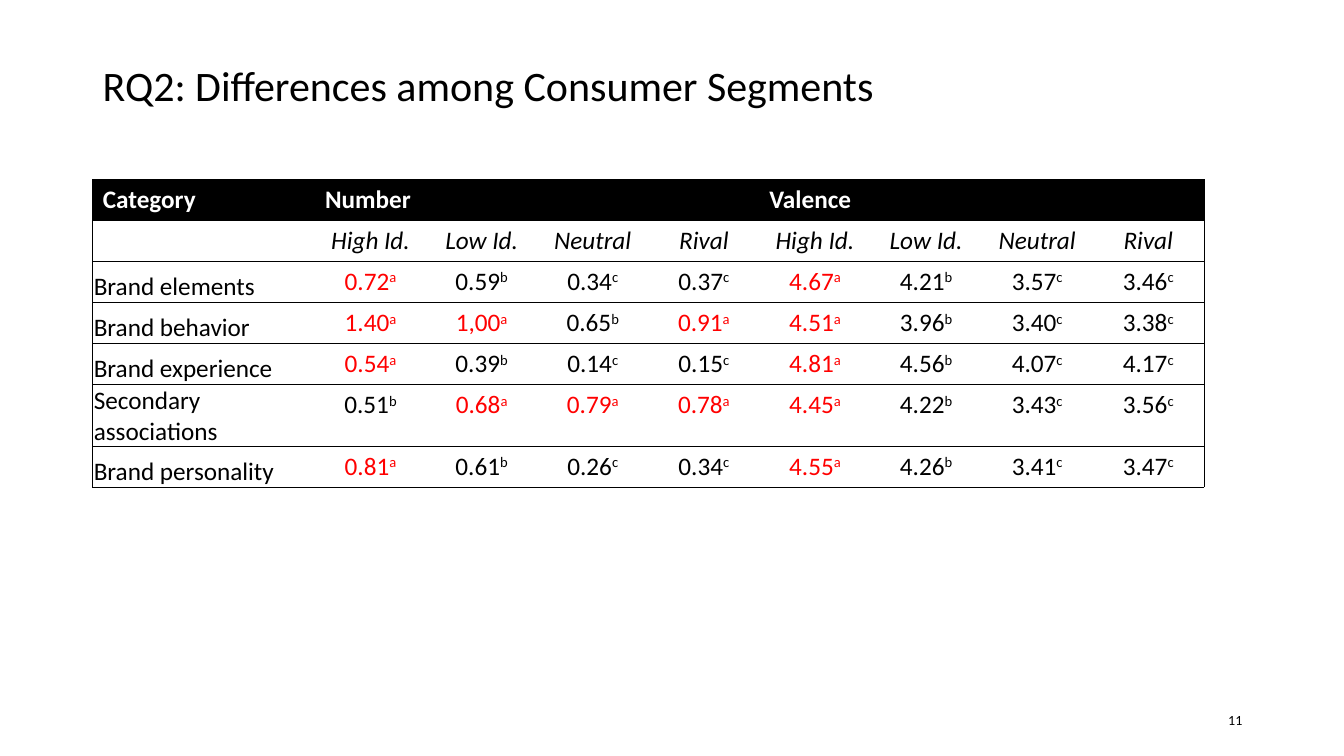
import lxml.etree
import pptx
import pptx.dml.color
import pptx.enum.text
import pptx.oxml.ns
import pptx.util

Inches = pptx.util.Inches
ALIGN = pptx.enum.text.PP_ALIGN
ANCHOR = pptx.enum.text.MSO_ANCHOR
BLACK, WHITE, RED = "000000", "FFFFFF", "FF0000"
NO_STYLE = "{2D5ABB26-0587-4C30-8999-92F81FD0307C}"
SEGMENTS = ["High Id.", "Low Id.", "Neutral", "Rival"]
RATINGS = [
    ("Brand elements", "0.72a 0.59b 0.34c 0.37c 4.67a 4.21b 3.57c 3.46c"),
    ("Brand behavior", "1.40a 1,00a 0.65b 0.91a 4.51a 3.96b 3.40c 3.38c"),
    ("Brand experience", "0.54a 0.39b 0.14c 0.15c 4.81a 4.56b 4.07c 4.17c"),
    ("Secondary associations", "0.51b 0.68a 0.79a 0.78a 4.45a 4.22b 3.43c 3.56c"),
    ("Brand personality", "0.81a 0.61b 0.26c 0.34c 4.55a 4.26b 3.41c 3.47c"),
]


def rgb(color):
    """Turn a hex string into a colour."""
    return pptx.dml.color.RGBColor.from_string(color)


def add_run(p, text, size=18, color=BLACK, bold=False, italic=False):
    """Add one formatted run to a paragraph."""
    r = p.add_run()
    r.text = text
    r.font.name = "Calibri"
    r.font.size = pptx.util.Pt(size)
    r.font.bold = bold
    r.font.italic = italic
    r.font.color.rgb = rgb(color)
    return r


def add_text(slide, box, text, size, anchor, align):
    """Place a single line of text in the given box."""
    tf = slide.shapes.add_textbox(*map(Inches, box)).text_frame
    tf.word_wrap = True
    tf.vertical_anchor = anchor
    p = tf.paragraphs[0]
    p.alignment = align
    p.line_spacing = 0.9
    add_run(p, text, size)


def add_borders(cell, sides):
    """Draw thin black lines on the named sides of a cell."""
    tc_pr = cell._tc.get_or_add_tcPr()
    for side in sides:
        ln = lxml.etree.SubElement(tc_pr, pptx.oxml.ns.qn(f"a:ln{side}"), w="6350")
        fill = lxml.etree.SubElement(ln, pptx.oxml.ns.qn("a:solidFill"))
        lxml.etree.SubElement(fill, pptx.oxml.ns.qn("a:srgbClr"), val=BLACK)


def fill_header(table):
    """Write the measures and the segment names below them."""
    for col, text in ((0, "Category"), (1, "Number"), (5, "Valence")):
        p = table.cell(0, col).text_frame.paragraphs[0]
        add_run(p, text, color=WHITE, bold=True)
    for col, text in enumerate(SEGMENTS * 2, 1):
        p = table.cell(1, col).text_frame.paragraphs[0]
        p.alignment = ALIGN.CENTER
        add_run(p, text, italic=True)


def fill_rating(table, row, category, ratings):
    """Write one category, with group a in red and group letters raised."""
    cell = table.cell(row, 0)
    cell.vertical_anchor = ANCHOR.BOTTOM
    cell.margin_left = cell.margin_right = cell.margin_top = Inches(0.01)
    cell.margin_bottom = 0
    add_run(cell.text_frame.paragraphs[0], category)
    for col, rating in enumerate(ratings.split(), 1):
        value, group = rating[:-1], rating[-1]
        color = RED if group == "a" else BLACK
        p = table.cell(row, col).text_frame.paragraphs[0]
        p.alignment = ALIGN.CENTER
        add_run(p, value, color=color)
        r = add_run(p, group, color=color)
        r._r.get_or_add_rPr().set("baseline", "30000")


def add_ratings_table(slide, box):
    """Build the table of ratings, its first column twice as wide as the rest."""
    rows, cols = len(RATINGS) + 2, 2 * len(SEGMENTS) + 1
    left, top, width, height = map(Inches, box)
    frame = slide.shapes.add_table(rows, cols, left, top, width, height)
    table = frame.table
    table._tbl.tblPr.find(pptx.oxml.ns.qn("a:tableStyleId")).text = NO_STYLE
    for col, column in enumerate(table.columns):
        column.width = width * (1 if col else 2) // (cols + 1)
    for row in range(rows):
        table.rows[row].height = height // rows
        for col in range(cols):
            cell = table.cell(row, col)
            sides = ["L"] * (col == 0) + ["R"] * (col == cols - 1) + ["T", "B"]
            add_borders(cell, sides)
            cell.fill.solid()
            cell.fill.fore_color.rgb = rgb(WHITE if row else BLACK)
    fill_header(table)
    for row, (category, ratings) in enumerate(RATINGS, 2):
        fill_rating(table, row, category, ratings)


def main():
    """Build the slide and save it."""
    prs = pptx.Presentation()
    prs.slide_width, prs.slide_height = Inches(13.33), Inches(7.5)
    slide = prs.slides.add_slide(prs.slide_layouts[6])
    add_text(slide, (0.92, 0.62, 11.5, 0.53), "RQ2: Differences among Consumer Segments",
             30, ANCHOR.BOTTOM, ALIGN.LEFT)
    add_text(slide, (9.42, 6.95, 3, 0.4), "11", 10, ANCHOR.MIDDLE, ALIGN.RIGHT)
    add_ratings_table(slide, (0.92, 1.78, 11.02, 2.85))
    prs.save("out.pptx")


if __name__ == "__main__":
    main()
